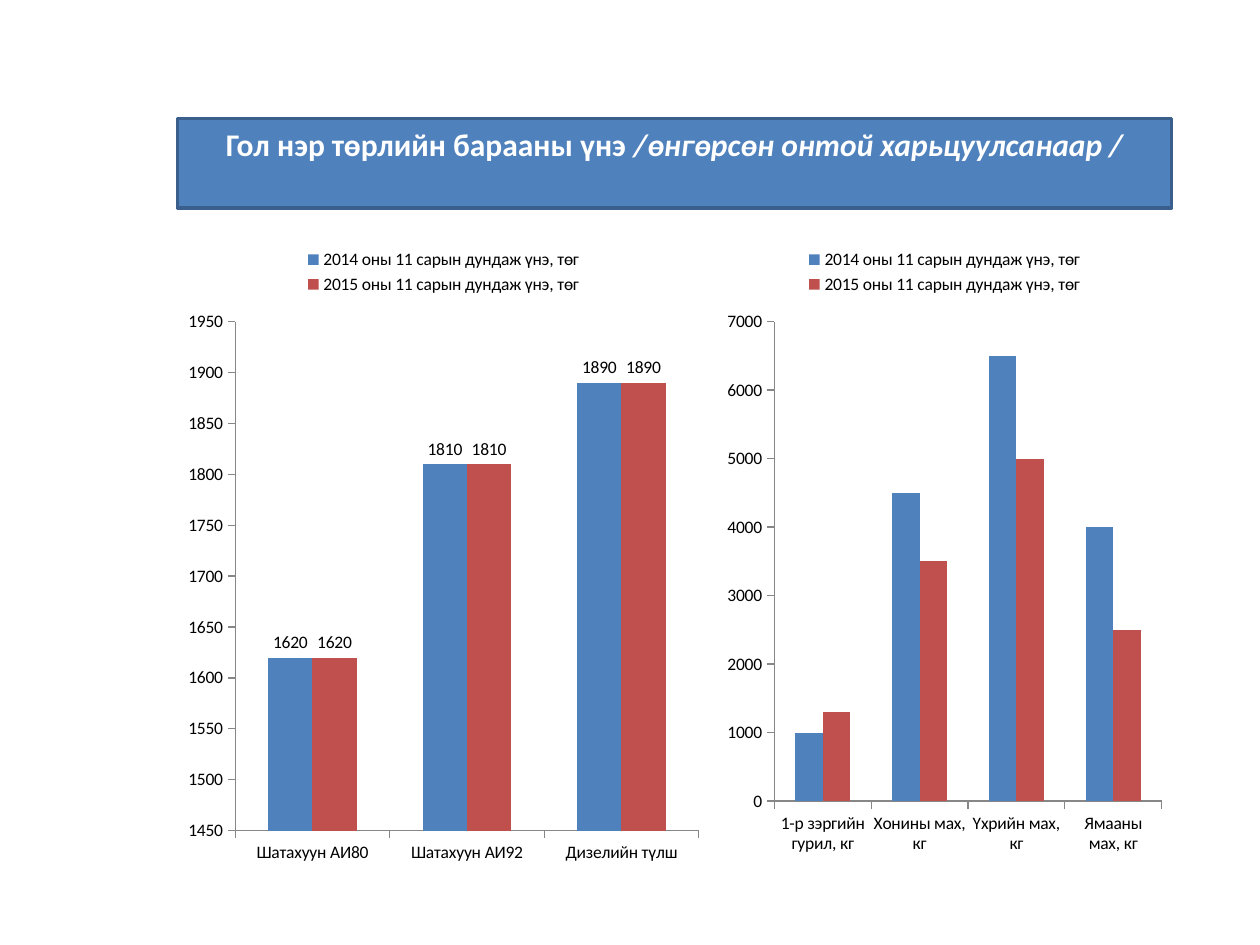
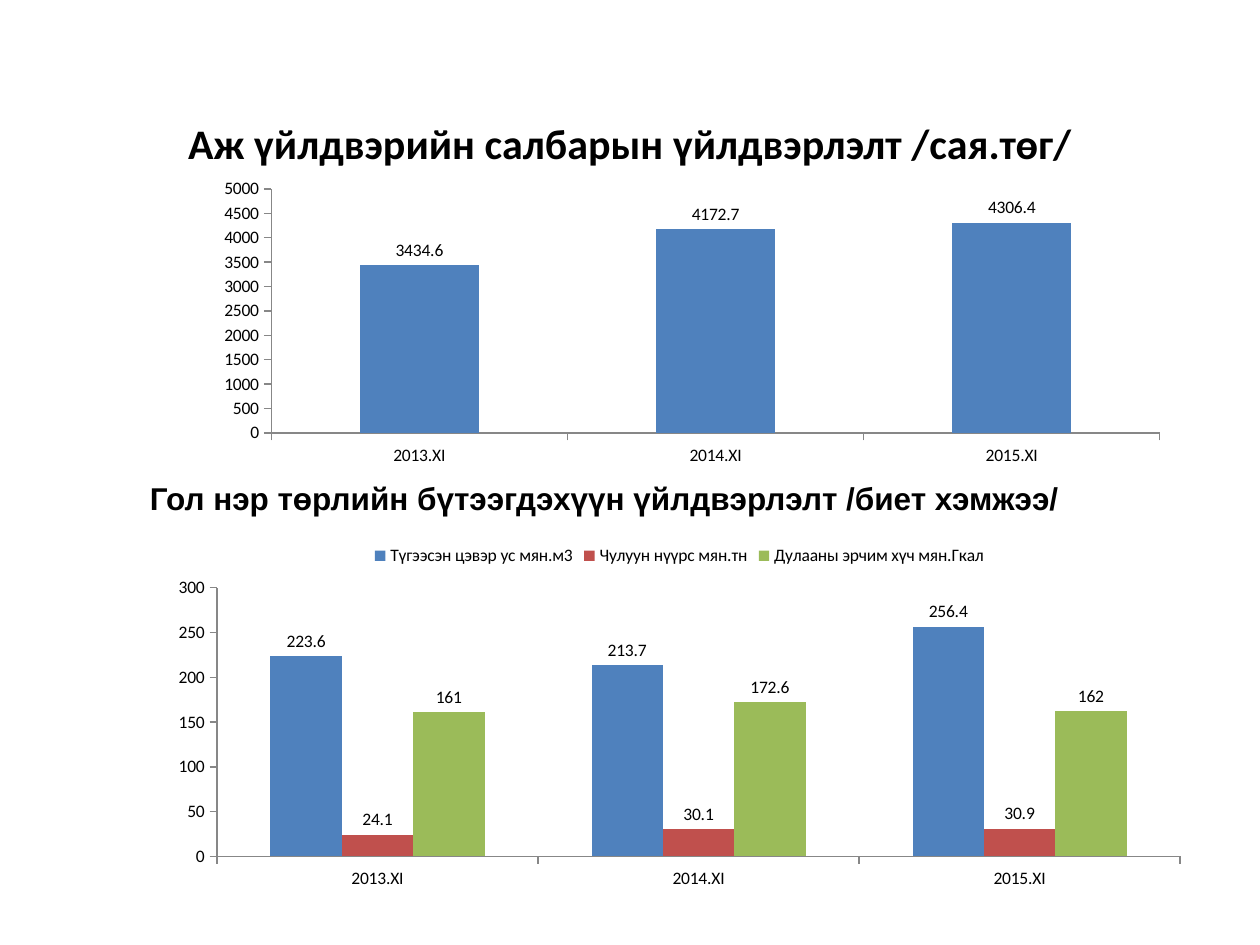
"""Build two slides on commodity prices and industrial output."""
import lxml.etree
import pptx
import pptx.chart.data
import pptx.dml.color
import pptx.enum.chart
import pptx.enum.shapes
import pptx.enum.text
import pptx.oxml.ns
import pptx.util

BLUE, RED, GREEN = "4F81BD", "C0504D", "9BBB59"
BLACK, WHITE = "000000", "FFFFFF"
BAND_EDGE, AXIS_GRAY = "3A5F8C", "878787"
MONTHS = ["2013.XI", "2014.XI", "2015.XI"]
PRICE_YEARS = [f"{year} оны 11 сарын дундаж үнэ, төг" for year in (2014, 2015)]
CENTER = pptx.enum.text.PP_ALIGN.CENTER
LEFT = pptx.enum.text.PP_ALIGN.LEFT


def rgb(value):
    return pptx.dml.color.RGBColor.from_string(value)


def place(box):
    return [pptx.util.Cm(length) for length in box]


def write_heading(holder, runs, size, color, font="Calibri", align=CENTER,
                  anchor=pptx.enum.text.MSO_ANCHOR.TOP):
    frame = holder.text_frame
    frame.word_wrap = True
    frame.vertical_anchor = anchor
    paragraph = frame.paragraphs[0]
    paragraph.alignment = align
    for words, italic in runs:
        run = paragraph.add_run()
        run.text = words
        run.font.name = font
        run.font.size = pptx.util.Pt(size)
        run.font.bold = True
        run.font.italic = italic
        run.font.color.rgb = rgb(color)


def add_band(slide, box, runs):
    band = slide.shapes.add_shape(pptx.enum.shapes.MSO_SHAPE.RECTANGLE, *place(box))
    band.shadow.inherit = False
    band.fill.solid()
    band.fill.fore_color.rgb = rgb(BLUE)
    band.line.color.rgb = rgb(BAND_EDGE)
    band.line.width = pptx.util.Pt(2)
    write_heading(band, runs, 18, WHITE)


def add_heading(slide, box, words, size, **style):
    heading = slide.shapes.add_textbox(*place(box))
    write_heading(heading, [(words, False)], size, BLACK, **style)


def style_axis(axis):
    axis.has_major_gridlines = False
    axis.major_tick_mark = pptx.enum.chart.XL_TICK_MARK.OUTSIDE
    axis.minor_tick_mark = pptx.enum.chart.XL_TICK_MARK.NONE
    axis.format.line.color.rgb = rgb(AXIS_GRAY)
    axis.format.line.width = pptx.util.Pt(0.75)


def fix_plot(chart, area):
    qn = pptx.oxml.ns.qn
    plot_area = chart.element.find(f".//{qn('c:plotArea')}")
    for layout in plot_area.findall(qn("c:layout")):
        plot_area.remove(layout)
    layout = lxml.etree.Element(qn("c:layout"))
    manual = lxml.etree.SubElement(layout, qn("c:manualLayout"))
    settings = [("layoutTarget", "inner"), ("xMode", "edge"), ("yMode", "edge"),
                *zip("xywh", area)]
    for tag, value in settings:
        lxml.etree.SubElement(manual, qn(f"c:{tag}")).set("val", str(value))
    plot_area.insert(0, layout)


def add_columns(slide, box, categories, series, scale, labels=True, legend=True):
    data = pptx.chart.data.CategoryChartData()
    data.categories = categories
    for name, values in series:
        data.add_series(name, values)
    chart = slide.shapes.add_chart(
        pptx.enum.chart.XL_CHART_TYPE.COLUMN_CLUSTERED, *place(box), data).chart
    chart.has_title = False
    chart.font.name = "Calibri"
    chart.font.size = pptx.util.Pt(10)
    chart.font.color.rgb = rgb(BLACK)
    chart.has_legend = legend
    if legend:
        chart.legend.position = pptx.enum.chart.XL_LEGEND_POSITION.TOP
        chart.legend.include_in_layout = False
    style_axis(chart.category_axis)
    style_axis(chart.value_axis)
    axis = chart.value_axis
    axis.minimum_scale, axis.maximum_scale, axis.major_unit = scale
    plot = chart.plots[0]
    plot.vary_by_categories = False
    plot.gap_width = 150
    plot.overlap = 0
    for columns, color in zip(plot.series, (BLUE, RED, GREEN)):
        columns.format.fill.solid()
        columns.format.fill.fore_color.rgb = rgb(color)
        if labels:
            columns.data_labels.show_value = True
            columns.data_labels.position = pptx.enum.chart.XL_LABEL_POSITION.OUTSIDE_END
    return chart


def build_prices(slide, box):
    left, top, width, height = box
    add_band(slide, (left, top, width, 1.8),
             [("Гол нэр төрлийн барааны үнэ ", False),
              ("/өнгөрсөн онтой харьцуулсанаар /", True)])
    fuel_prices = [1620, 1810, 1890]
    add_columns(slide, (left, top + 2.36, 10.72, height - 2.36),
                ["Шатахуун АИ80", "Шатахуун АИ92", "Дизелийн түлш"],
                zip(PRICE_YEARS, [fuel_prices, fuel_prices]), (1450, 1950, 50))
    add_columns(slide, (left + 10.9, top + 2.36, 9.12, height - 2.56),
                ["1-р зэргийн гурил, кг", "Хонины мах, кг", "Үхрийн мах, кг",
                 "Ямааны мах, кг"],
                zip(PRICE_YEARS, [[1000, 4500, 6500, 4000], [1300, 3500, 5000, 2500]]),
                (0, 7000, 1000), labels=False)


def build_industry(slide, box):
    left, top, width, height = box
    add_heading(slide, (left, top, width, 1.78),
                "Аж үйлдвэрийн салбарын үйлдвэрлэлт /сая.төг/", 24,
                anchor=pptx.enum.text.MSO_ANCHOR.MIDDLE)
    add_heading(slide, (left + 1.5, top + 7.55, 22.02, 1.02),
                "Гол нэр төрлийн бүтээгдэхүүн үйлдвэрлэлт /биет хэмжээ/", 18,
                font="Arial", align=LEFT)
    output = add_columns(slide, (left + 1.7, top + 1.4, 20.83, 6.15), MONTHS,
                         [("Series 1", [3434.6, 4172.7, 4306.4])],
                         (0, 5000, 500), legend=False)
    fix_plot(output, (0.12, 0.07, 0.86, 0.8))
    add_columns(slide, (left + 1.91, top + 8.74, 21.03, height - 8.74), MONTHS,
                [("Түгээсэн цэвэр ус мян.м3", [223.6, 213.7, 256.4]),
                 ("Чулуун нүүрс мян.тн", [24.1, 30.1, 30.9]),
                 ("Дулааны эрчим хүч мян.Гкал", [161, 172.6, 162])],
                (0, 300, 50))


def main():
    deck = pptx.Presentation()
    deck.slide_width, deck.slide_height = pptx.util.Cm(25.4), pptx.util.Cm(19.05)
    blank = deck.slide_layouts[6]
    build_prices(deck.slides.add_slide(blank), (3.58, 2.39, 20.04, 15.26))
    build_industry(deck.slides.add_slide(blank), (1.27, 1.98, 22.86, 16.08))
    deck.save("out.pptx")


if __name__ == "__main__":
    main()
